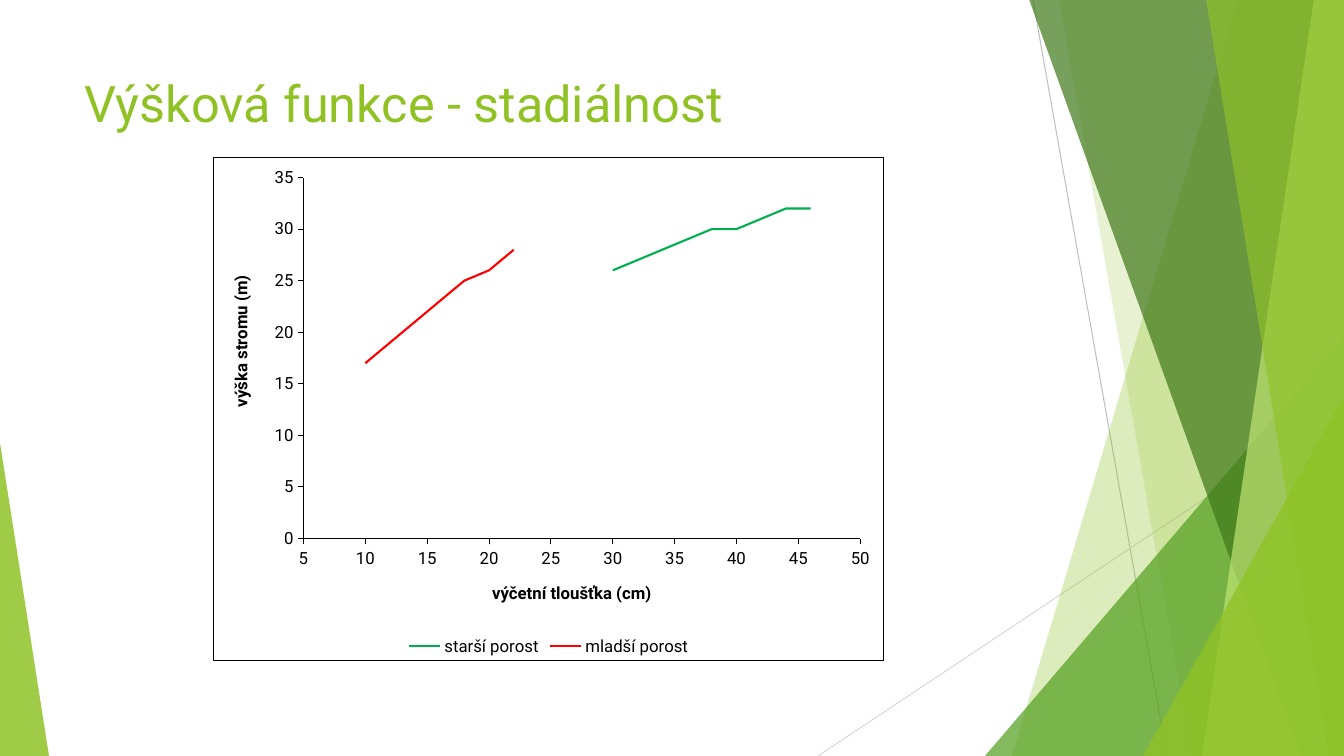
from lxml import etree
from pptx import Presentation
from pptx.chart.data import XyChartData
from pptx.dml.color import RGBColor
from pptx.enum.chart import XL_CHART_TYPE as ChartType, XL_LEGEND_POSITION as LegendPos
from pptx.enum.chart import XL_MARKER_STYLE as Marker, XL_TICK_MARK as Tick
from pptx.enum.shapes import MSO_CONNECTOR as Connector, MSO_SHAPE as Preset
from pptx.enum.text import MSO_ANCHOR as Anchor, MSO_AUTO_SIZE as AutoSize, PP_ALIGN as Align
from pptx.oxml import parse_xml
from pptx.oxml.ns import nsdecls, qn
from pptx.util import Pt

PX = 914400 / 100.8
WIDTH, HEIGHT = 1344, 756
CHART_X, CHART_Y, CHART_W, CHART_H = 213, 157, 671, 504
FONT = "Roboto"
COLORS = {
    "lime": "90C226", "green": "54A021", "dark": "3F7819", "pale": "C0E474",
    "ray": "BFBFBF", "light_ray": "D9D9D9", "black": "000000", "white": "FFFFFF",
    "older": "00B050", "younger": "FF0000",
}


def rgb(name):
    return RGBColor.from_string(COLORS[name])


def place(parent, x, y, size=None):
    """Set a manual chart layout; x, y and size are px within the chart frame."""
    layout = parent.find(qn("c:layout"))
    if layout is None:
        layout = etree.Element(qn("c:layout"))
        parent.insert(0, layout)
    manual = etree.SubElement(layout, qn("c:manualLayout"))
    settings = [("xMode", "edge"), ("yMode", "edge"),
                ("x", round(x / CHART_W, 4)), ("y", round(y / CHART_H, 4))]
    if size:
        settings.insert(0, ("layoutTarget", "inner"))
        settings += [("w", round(size[0] / CHART_W, 4)), ("h", round(size[1] / CHART_H, 4))]
    for tag, value in settings:
        etree.SubElement(manual, qn(f"c:{tag}")).set("val", str(value))


prs = Presentation()
prs.slide_width, prs.slide_height = round(WIDTH * PX), round(HEIGHT * PX)
slide = prs.slides.add_slide(prs.slide_layouts[5])

# Thin rays behind the facets
for x1, y1, x2, y2, color in [(1033, 0, 1167, HEIGHT, "ray"),
                              (WIDTH, 406, 818, HEIGHT, "light_ray")]:
    ray = slide.shapes.add_connector(Connector.STRAIGHT,
                                     *(round(v * PX) for v in (x1, y1, x2, y2)))
    ray.line.color.rgb = rgb(color)
    ray.line.width = Pt(0.75)
    etree.SubElement(ray.element.spPr, qn("a:effectLst"))

# Facets: bands (top x, bottom x) reach the right edge;
# triangles (left, top, width, apex) stand on the bottom edge
facets = [
    ((1238, 1012), "lime", 30),
    ((1059, 1192), "lime", 20),
    ((985, 336, 359, 1), "green", 72),
    ((1029, 1301), "dark", 70),
    ((1314, 1202), "pale", 70),
    ((1206, 1329), "lime", 65),
    ((1143, 396, 201, 1), "lime", 80),
    ((0, 443, 49, 0), "lime", 85),
]
for geometry, color, opacity in facets:
    if len(geometry) == 2:
        top_x, bottom_x = geometry
        outline = slide.shapes.build_freeform(top_x, -1, scale=PX)
        outline.add_line_segments([(WIDTH, -1), (WIDTH, HEIGHT), (bottom_x, HEIGHT)], close=True)
        facet = outline.convert_to_shape()
    else:
        left, top, width, apex = geometry
        facet = slide.shapes.add_shape(Preset.ISOSCELES_TRIANGLE, *(
            round(v * PX) for v in (left, top, width, HEIGHT - top)))
        facet.adjustments[0] = apex
    facet.shadow.inherit = False
    facet.line.fill.background()
    facet.fill.solid()
    facet.fill.fore_color.rgb = rgb(color)
    tint = facet.element.spPr.find(".//" + qn("a:srgbClr"))
    etree.SubElement(tint, qn("a:alpha")).set("val", str(opacity * 1000))

# Title
title = slide.shapes.title
title.left, title.top, title.width, title.height = (round(v * PX) for v in (74, 67, 948, 145))
title.text_frame.text = "Výšková funkce - stadiálnost"
title.text_frame.vertical_anchor = Anchor.TOP
title.text_frame.auto_size = AutoSize.NONE
heading = title.text_frame.paragraphs[0]
heading.alignment = Align.LEFT
heading.font.name, heading.font.size = FONT, Pt(36)
heading.font.color.rgb = rgb("lime")

# Height curves: tree height by stem diameter, every 2 cm
stands = [
    ("starší porost", "older", 30, [26, 27, 28, 29, 30, 30, 31, 32, 32]),
    ("mladší porost", "younger", 10, [17, 19, 21, 23, 25, 26, 28]),
]
data = XyChartData()
for name, _, first_diameter, heights in stands:
    curve = data.add_series(name)
    for step, height in enumerate(heights):
        curve.add_data_point(first_diameter + 2 * step, height)

chart = slide.shapes.add_chart(
    ChartType.XY_SCATTER_SMOOTH_NO_MARKERS,
    *(round(v * PX) for v in (CHART_X, CHART_Y, CHART_W, CHART_H)), data).chart
chart.has_title = False
chart.font.name, chart.font.size = FONT, Pt(12)
chart.font.color.rgb = rgb("black")
chart.has_legend = True
chart.legend.position = LegendPos.BOTTOM
chart.legend.include_in_layout = False
chart.plots[0].vary_by_categories = False

for curve, (_, color, _, _) in zip(chart.plots[0].series, stands):
    curve.smooth = True
    curve.marker.style = Marker.NONE
    curve.format.line.color.rgb = rgb(color)
    curve.format.line.width = Pt(1.5)

# Axes with their titles, placed inside the chart frame
for axis, caption, low, high, x, y in [
    (chart.category_axis, "výčetní tloušťka (cm)", 5, 50, 276, 422),
    (chart.value_axis, "výška stromu (m)", 0, 35, 13, 115),
]:
    axis.minimum_scale, axis.maximum_scale, axis.major_unit = low, high, 5
    axis.has_major_gridlines = False
    axis.major_tick_mark, axis.minor_tick_mark = Tick.OUTSIDE, Tick.NONE
    axis.tick_labels.number_format = "0"
    axis.tick_labels.number_format_is_linked = False
    axis.format.line.color.rgb = rgb("black")
    axis.format.line.width = Pt(0.75)
    axis.axis_title.text_frame.text = caption
    label = axis.axis_title.text_frame.paragraphs[0].font
    label.name, label.size, label.bold = FONT, Pt(12), True
    label.color.rgb = rgb("black")
    place(axis.axis_title.element, x, y)

# Plot area and chart frame
chart_body = chart.element.find(qn("c:chart"))
place(chart_body.find(qn("c:plotArea")), 90, 20, (558, 362))
chart_body.addnext(parse_xml(
    f'<c:spPr {nsdecls("c", "a")}>'
    f'<a:solidFill><a:srgbClr val="{COLORS["white"]}"/></a:solidFill>'
    f'<a:ln w="{Pt(1)}"><a:solidFill><a:srgbClr val="{COLORS["black"]}"/></a:solidFill></a:ln>'
    '</c:spPr>'))

prs.save("out.pptx")
